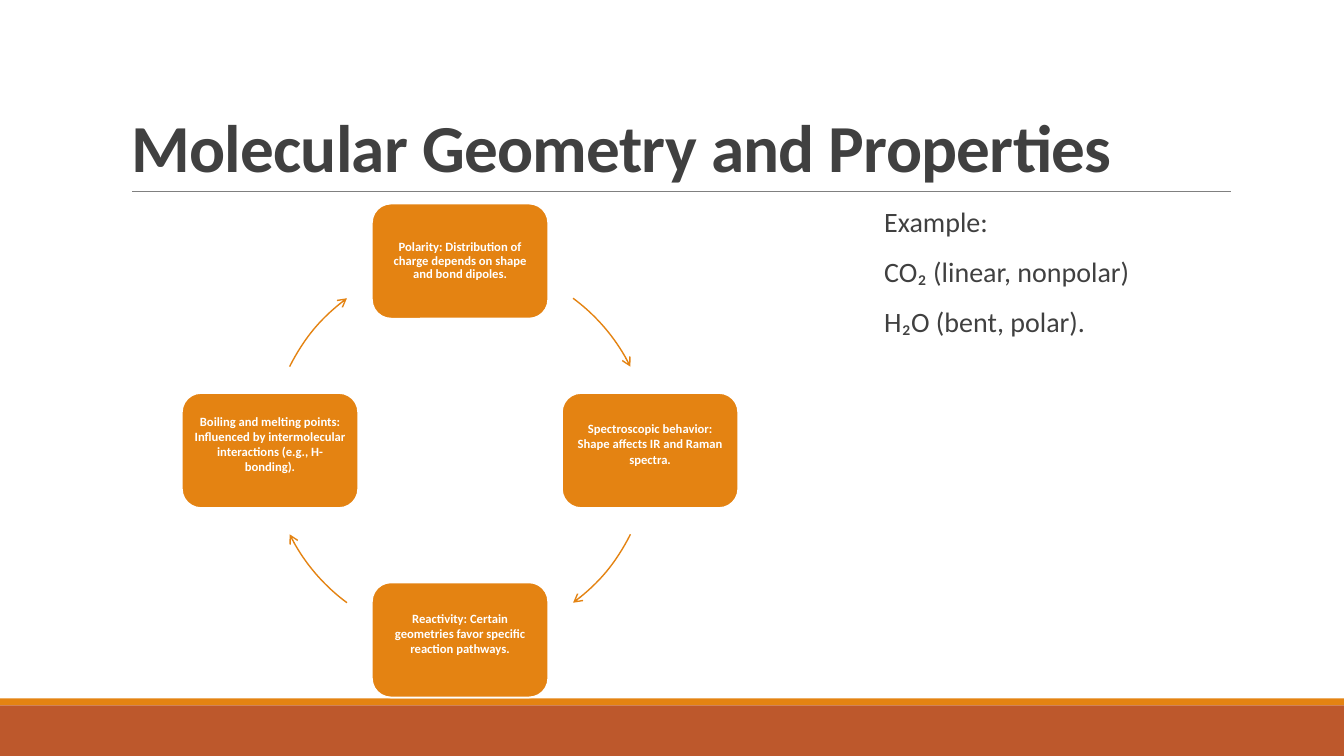
from dataclasses import dataclass

from lxml.etree import SubElement
from pptx import Presentation
from pptx.dml.color import RGBColor
from pptx.enum.shapes import MSO_CONNECTOR, MSO_SHAPE
from pptx.enum.text import MSO_ANCHOR, MSO_AUTO_SIZE, PP_ALIGN
from pptx.oxml.ns import qn
from pptx.util import Inches, Pt

SLIDE_WIDTH, SLIDE_HEIGHT = Inches(13.33), Inches(7.5)
COLUMN, ROW = SLIDE_WIDTH / 100, SLIDE_HEIGHT / 100

ORANGE, RUST, GRAY, INK, WHITE = "E48312", "BD582C", "808080", "404040", "FFFFFF"

HEADING = "Molecular Geometry and Properties"
EXAMPLES = ["Example:", "CO₂ (linear, nonpolar)", "H₂O (bent, polar)."]
PROPERTIES = [
    ("Polarity: Distribution of charge depends on shape and bond dipoles.", 0.5, 0, 0.9, 0.04),
    ("Spectroscopic behavior: Shape affects IR and Raman spectra.", 1, 0.5, 1.0, 0.17),
    ("Reactivity: Certain geometries favor specific reaction pathways.", 0.5, 1, 1.0, 0.17),
    ("Boiling and melting points: Influenced by intermolecular interactions (e.g., H-bonding).",
     0, 0.5, 1.0, 0.17),
]
ARC_STARTS = [306.6, 26.2, 126.6, 206.2]
ARC_SWEEP = 27.2


@dataclass
class Box:
    left: float
    top: float
    width: float
    height: float

    def emu(self):
        return (round(self.left * COLUMN), round(self.top * ROW),
                round(self.width * COLUMN), round(self.height * ROW))


def color(code):
    return RGBColor.from_string(code)


def apply(target, formats):
    for name, value in formats.items():
        setattr(target, name, value)


def place(placeholder, box):
    apply(placeholder, dict(zip(("left", "top", "width", "height"), box.emu())))


def write(paragraph, wording, size, ink, bold, formats):
    run = paragraph.add_run()
    run.text = wording
    apply(run.font, {"size": Pt(size), "name": "Calibri", "bold": bold})
    run.font.color.rgb = color(ink)
    apply(paragraph, formats)
    return run


def add_filled(slide, preset, box, fill):
    shape = slide.shapes.add_shape(preset, *box.emu())
    shape.shadow.inherit = False
    shape.fill.solid()
    shape.fill.fore_color.rgb = color(fill)
    shape.line.fill.background()
    return shape


def add_footer_bars(slide, box):
    stripe = box.height * 0.12
    add_filled(slide, MSO_SHAPE.RECTANGLE, Box(box.left, box.top, box.width, stripe), ORANGE)
    add_filled(slide, MSO_SHAPE.RECTANGLE,
               Box(box.left, box.top + stripe, box.width, box.height - stripe), RUST)


def add_heading(slide, box):
    title = slide.shapes.title
    place(title, box)
    apply(title.text_frame, {"vertical_anchor": MSO_ANCHOR.BOTTOM, "word_wrap": True,
                             "auto_size": MSO_AUTO_SIZE.NONE})
    run = write(title.text_frame.paragraphs[0], HEADING, 48, INK, True,
                {"alignment": PP_ALIGN.LEFT, "line_spacing": 0.85})
    run.font._element.set("spc", "-50")

    left, top, width, height = box.emu()
    margin = Inches(0.11)
    rule = slide.shapes.add_connector(MSO_CONNECTOR.STRAIGHT, left + margin, top + height,
                                      left + width, top + height)
    rule.line.color.rgb = color(GRAY)
    rule.line.width = Pt(0.5)
    SubElement(rule._element.spPr, qn("a:effectLst"))


def add_examples(slide, box):
    examples = slide.placeholders[1]
    place(examples, box)
    frame = examples.text_frame
    apply(frame, {"margin_left": 0, "margin_right": 0, "word_wrap": True,
                  "auto_size": MSO_AUTO_SIZE.NONE, "vertical_anchor": MSO_ANCHOR.TOP})
    for index, wording in enumerate(EXAMPLES):
        paragraph = frame.add_paragraph() if index else frame.paragraphs[0]
        write(paragraph, wording, 20, INK, False,
              {"line_spacing": 0.9, "space_before": Pt(12), "space_after": Pt(2)})
        properties = paragraph._p.get_or_add_pPr()
        properties.set("marL", str(Inches(0.1)))
        properties.set("indent", "0")
        SubElement(properties, qn("a:buNone"))


def add_property(slide, box, wording, spacing, bottom):
    node = add_filled(slide, MSO_SHAPE.ROUNDED_RECTANGLE, box, ORANGE)
    node.line.color.rgb = color(WHITE)
    node.line.width = Pt(1.25)
    apply(node.text_frame, {"margin_left": Inches(0.06), "margin_right": Inches(0.06),
                            "margin_top": Inches(0.04), "margin_bottom": Inches(bottom),
                            "word_wrap": True, "vertical_anchor": MSO_ANCHOR.MIDDLE})
    write(node.text_frame.paragraphs[0], wording, 9, WHITE, True,
          {"alignment": PP_ALIGN.CENTER, "line_spacing": spacing})


def add_arc(slide, box, start):
    arc = slide.shapes.add_shape(MSO_SHAPE.ARC, *box.emu())
    arc.shadow.inherit = False
    arc.fill.background()
    for index, angle in enumerate((start, start + ARC_SWEEP)):
        arc.adjustments[index] = angle * 0.6
    arc.line.color.rgb = color(ORANGE)
    arc.line.width = Pt(1)
    SubElement(arc.line._get_or_add_ln(), qn("a:tailEnd"), type="arrow")


def add_cycle(slide, box):
    node_width, node_height = box.width * 0.317, box.height * 0.233
    ring = Box(box.left + node_width / 2, box.top + node_height / 2,
               box.width - node_width, box.height - node_height)
    for (wording, across, down, spacing, bottom), start in zip(PROPERTIES, ARC_STARTS):
        node = Box(box.left + across * ring.width, box.top + down * ring.height,
                   node_width, node_height)
        add_property(slide, node, wording, spacing, bottom)
        add_arc(slide, ring, start)


def main():
    deck = Presentation()
    apply(deck, {"slide_width": SLIDE_WIDTH, "slide_height": SLIDE_HEIGHT})
    slide = deck.slides.add_slide(deck.slide_layouts[1])
    add_footer_bars(slide, Box(0, 92.4, 100, 7.6))
    add_heading(slide, Box(9, 4.13, 82.6, 21.2))
    add_examples(slide, Box(65.04, 26.93, 26.48, 58.67))
    add_cycle(slide, Box(13.53, 26.93, 41.4, 65.33))
    deck.save("out.pptx")


if __name__ == "__main__":
    main()
